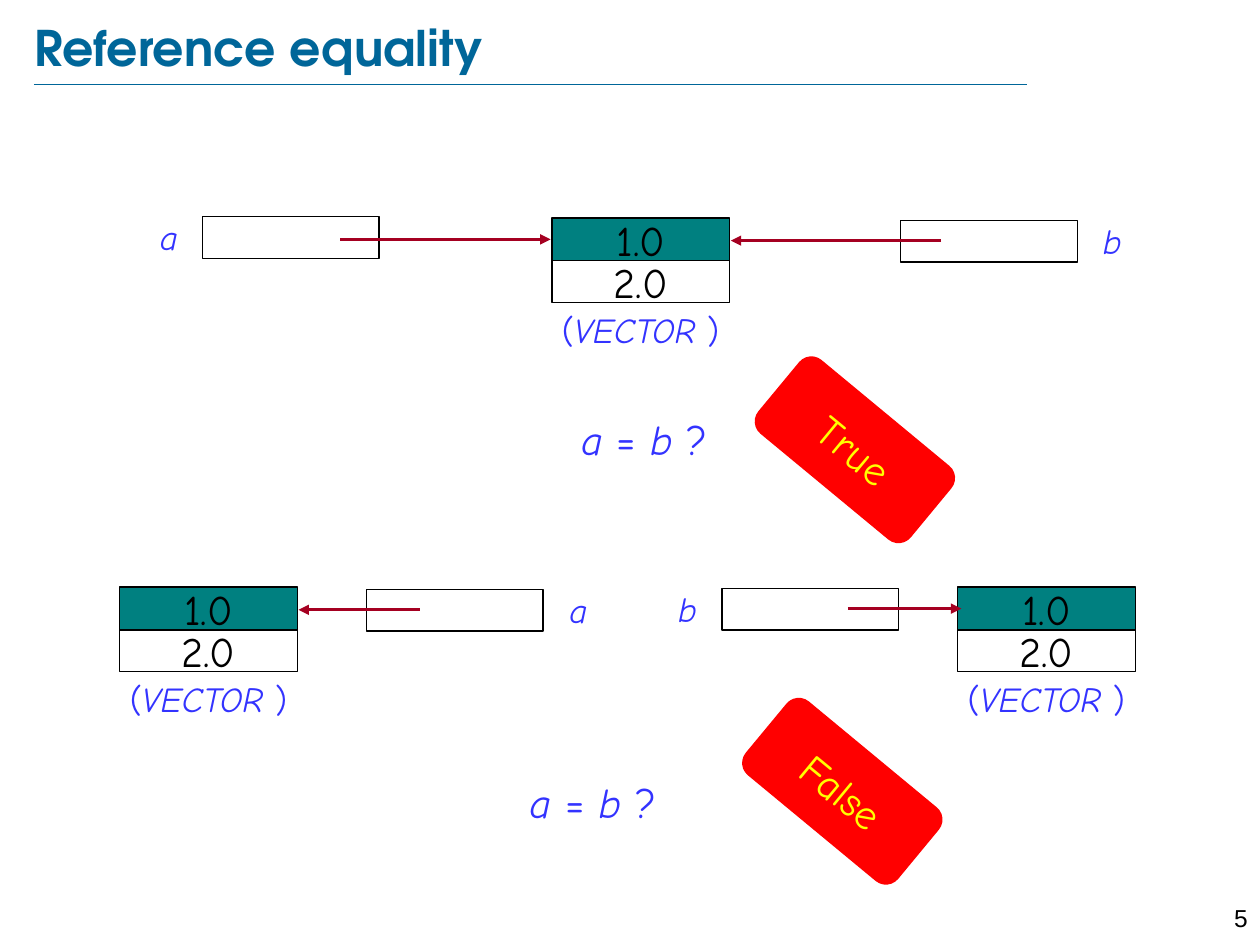
from lxml import etree
from pptx import Presentation
from pptx.dml.color import RGBColor
from pptx.enum.shapes import MSO_CONNECTOR, MSO_SHAPE
from pptx.enum.text import MSO_ANCHOR, PP_ALIGN
from pptx.oxml.ns import qn
from pptx.util import Emu, Pt

LINE = MSO_CONNECTOR.STRAIGHT
RECT, ROUND = MSO_SHAPE.RECTANGLE, MSO_SHAPE.ROUNDED_RECTANGLE
TOP, MIDDLE = MSO_ANCHOR.TOP, MSO_ANCHOR.MIDDLE
LEFT, CENTER, RIGHT = PP_ALIGN.LEFT, PP_ALIGN.CENTER, PP_ALIGN.RIGHT
SCALE = 9144
HAND = "Comic Neue"
BLUE, BLACK, WHITE = "3333FF", "000000", "FFFFFF"
TEAL, RED, YELLOW = "008080", "FF0000", "FFFF00"
TITLE, CRIMSON = "006699", "A50021"


def px(*nums):
    """Turn px lengths into EMU."""
    return [Emu(round(num * SCALE)) for num in nums]


def rgb(code):
    """Turn a hex string into a colour."""
    return RGBColor.from_string(code)


def write(shape, runs, size, color, align, anchor=MIDDLE, font=HAND, bold=False, pad=0):
    """Fill a shape with one paragraph of (text, italic) runs."""
    frame = shape.text_frame
    frame.word_wrap = True
    frame.vertical_anchor = anchor
    frame.margin_left = frame.margin_right = px(2 * pad)[0]
    frame.margin_top = frame.margin_bottom = px(pad)[0]
    para = frame.paragraphs[0]
    para.alignment = align
    for text, italic in runs:
        run = para.add_run()
        run.text = text
        run.font.name = font
        run.font.size = Pt(size)
        run.font.bold = bold
        run.font.italic = italic
        run.font.color.rgb = rgb(color)


def label(slide, box, runs, size, align, anchor=TOP):
    """Add blue text in a box."""
    text = slide.shapes.add_textbox(*px(*box))
    write(text, runs, size, BLUE, align, anchor, pad=5)


def block(slide, kind, box, fill, edge=None):
    """Add a filled shape, outlined if an edge colour is given."""
    shape = slide.shapes.add_shape(kind, *px(*box))
    shape.shadow.inherit = False
    shape.fill.solid()
    shape.fill.fore_color.rgb = rgb(fill)
    if edge:
        shape.line.color.rgb = rgb(edge)
        shape.line.width = Pt(0.75)
    else:
        shape.line.fill.background()
    return shape


def line(slide, ends, color, width):
    """Add a straight line without a shadow."""
    link = slide.shapes.add_connector(LINE, *px(*ends))
    link.line.color.rgb = rgb(color)
    link.line.width = Pt(width)
    etree.SubElement(link._element.spPr, qn("a:effectLst"))
    return link


def arrow(slide, start, end, y):
    """Add a reference arrow from a variable to its vector."""
    link = line(slide, (start, y, end, y), CRIMSON, 1.5)
    etree.SubElement(link.line._get_or_add_ln(), qn("a:tailEnd"), type="triangle")


def vector(slide, x, y):
    """Add a two-cell vector object with its type below."""
    cells = (("1.0", (x, y, 141, 34), TEAL), ("2.0", (x, y + 34, 141, 33), WHITE))
    for text, box, fill in cells:
        cell = block(slide, RECT, box, fill, BLACK)
        write(cell, [(text, False)], 24, BLACK, CENTER)
    runs = [("(", False), ("VECTOR ", True), (")", False)]
    label(slide, (x - 20, y + 67, 181, 44), runs, 20, CENTER)


def variable(slide, name, x, y, shift):
    """Add a variable box with its name beside it."""
    block(slide, RECT, (x, y, 140, 33), WHITE, BLACK)
    label(slide, (x + shift, y - 6, 44, 44), [(name, True)], 20, RIGHT)


def question(slide, x, y):
    """Add the equality question."""
    runs = [("a", True), (" = ", False), ("b", True), (" ?", False)]
    label(slide, (x, y, 921, 55), runs, 24, CENTER, MIDDLE)


def verdict(slide, text, x, y):
    """Add a tilted answer card."""
    card = block(slide, ROUND, (x, y, 157, 76), RED)
    card.rotation = 39.6
    write(card, [(text, False)], 24, YELLOW, CENTER, pad=5)


def heading(slide):
    """Add the title, its rule and the page number."""
    title = slide.shapes.title
    title.left, title.top, title.width, title.height = px(27, 13, 869, 48)
    write(title, [("Reference equality", False)], 28, TITLE, LEFT,
          font="TeX Gyre Adventor", bold=True)
    line(slide, (27, 67, 815, 67), TITLE, 0.25)
    page = slide.shapes.add_textbox(*px(945, 716, 55, 24))
    write(page, [("5", False)], 14, BLACK, RIGHT, font="Arial")
    page.text_frame.margin_right = px(10)[0]


def shared(slide):
    """Show two variables that refer to one vector."""
    vector(slide, 438, 173)
    variable(slide, "a", 161, 172, -54)
    variable(slide, "b", 715, 175, 141)
    arrow(slide, 270, 437, 190)
    arrow(slide, 747, 580, 191)
    question(slide, 51, 321)
    verdict(slide, "True", 600, 319)


def apart(slide):
    """Show two variables that refer to equal but distinct vectors."""
    vector(slide, 95, 466)
    vector(slide, 760, 466)
    variable(slide, "a", 291, 468, 141)
    variable(slide, "b", 573, 467, -54)
    arrow(slide, 333, 237, 484)
    arrow(slide, 673, 763, 483)
    question(slide, 10, 609)
    verdict(slide, "False", 590, 590)


def main():
    """Build and save the slide."""
    deck = Presentation()
    deck.slide_width, deck.slide_height = px(1000, 750)
    slide = deck.slides.add_slide(deck.slide_layouts[5])
    heading(slide)
    shared(slide)
    apart(slide)
    deck.save("out.pptx")


if __name__ == "__main__":
    main()
